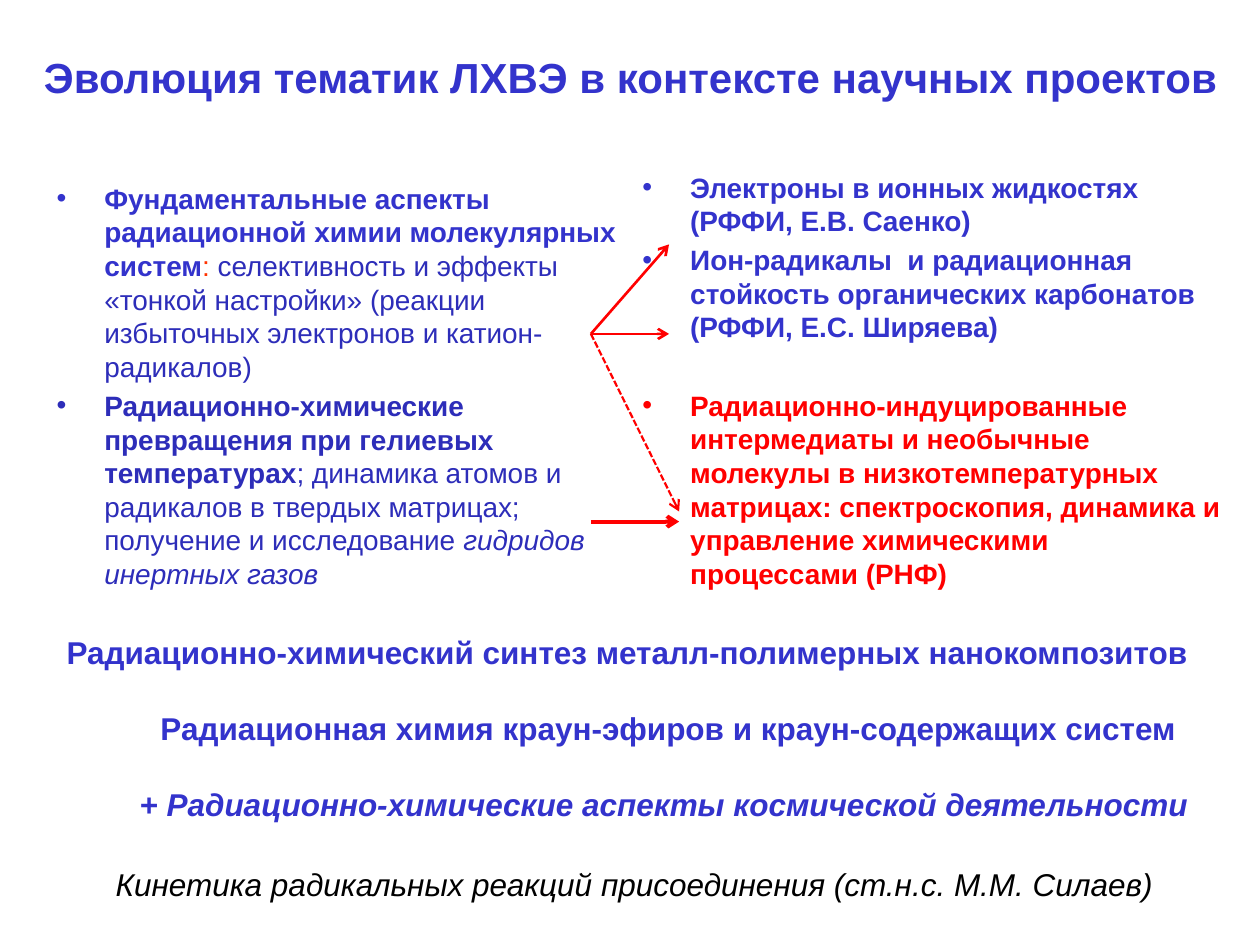
from pptx import Presentation
from pptx import util as u
from pptx.dml.color import RGBColor
from pptx.enum import dml, shapes, text
from pptx.oxml.ns import qn
from lxml import etree

COLORS = {"blue": "3333CC", "dark": "2D2DB9", "orange": "FF3300",
          "red": "FF0000", "black": "000000"}
INDENT = u.Inches(0.38)
CENTER = text.PP_ALIGN.CENTER


def add_text(s, box, size, paragraphs, anchor=text.MSO_ANCHOR.TOP, top=0.05):
    """Each paragraph is (options, runs); each run is (text, colour, style letters)."""
    tf = s.shapes.add_textbox(*map(u.Inches, box)).text_frame
    tf.word_wrap = True
    tf.vertical_anchor = anchor
    tf.margin_top = u.Inches(top)
    for i, (opts, runs) in enumerate(paragraphs):
        p = tf.paragraphs[0] if i == 0 else tf.add_paragraph()
        p.alignment = opts.get("align")
        p.line_spacing = opts.get("line")
        p.space_before = u.Pt(opts.get("before", 0))
        pPr = p._p.get_or_add_pPr()
        pPr.set("marL", str(opts.get("left", 0)))
        pPr.set("indent", str(opts.get("first", 0)))
        if opts.get("bullet"):
            etree.SubElement(pPr, qn("a:buFont")).set("typeface", "Arial")
            etree.SubElement(pPr, qn("a:buChar")).set("char", "•")
        for words, color, style in runs:
            r = p.add_run()
            r.text = words
            r.font.name = "Arial"
            r.font.size = u.Pt(size)
            r.font.bold = "b" in style
            r.font.italic = "i" in style
            r.font.color.rgb = RGBColor.from_string(COLORS[color])


def add_arrow(s, start, end, width, dashed):
    c = s.shapes.add_connector(shapes.MSO_CONNECTOR.STRAIGHT,
                               *map(u.Inches, start + end))
    c.line.color.rgb = RGBColor.from_string(COLORS["red"])
    c.line.width = u.Pt(width)
    if dashed:
        c.line.dash_style = dml.MSO_LINE.SQUARE_DOT
    etree.SubElement(c.line._get_or_add_ln(), qn("a:tailEnd")).set("type", "arrow")
    etree.SubElement(c._element.spPr, qn("a:effectLst"))


prs = Presentation()
prs.slide_width, prs.slide_height = u.Inches(10), u.Inches(7.5)
s = prs.slides.add_slide(prs.slide_layouts[6])

bullet = {"left": INDENT, "first": -INDENT, "before": 3.2, "bullet": True}
bullet_after_gap = {**bullet, "before": 25.6}
topic = {"align": CENTER, "left": INDENT, "before": 21.6}

# Research directions
add_text(s, (0.35, 1.39, 4.72, 3.78), 16, [
    (bullet, [
        ("Фундаментальные аспекты радиационной химии молекулярных систем", "blue", "b"),
        (": ", "orange", ""),
        ("селективность и эффекты «тонкой настройки» (реакции избыточных "
         "электронов и катион-радикалов)", "dark", "")]),
    (bullet, [
        ("Радиационно-химические превращения при гелиевых температурах", "dark", "b"),
        ("; динамика атомов и радикалов в твердых матрицах; получение и "
         "исследование ", "dark", ""),
        ("гидридов инертных газов", "dark", "i")]),
])

# Funded projects
add_text(s, (5, 0.99, 4.8, 4.57), 16, [
    (bullet, [("Электроны в ионных жидкостях (РФФИ, Е.В. Саенко)", "blue", "b")]),
    (bullet, [("Ион-радикалы  и радиационная стойкость органических карбонатов "
               "(РФФИ, Е.С. Ширяева)", "blue", "b")]),
    (bullet_after_gap, [
        ("Радиационно-индуцированные интермедиаты и необычные молекулы в "
         "низкотемпературных матрицах: спектроскопия, динамика и управление "
         "химическими процессами (РНФ)", "red", "b")]),
], top=0.36)

# Title
add_text(s, (0.2, 0.21, 9.61, 0.79), 24, [
    ({"align": CENTER},
     [("Эволюция тематик ЛХВЭ в контексте научных проектов", "blue", "b")]),
], anchor=text.MSO_ANCHOR.MIDDLE)

# Links from directions to projects
fork = (4.69, 2.65)
for start, end, width, dashed in [
    (fork, (5.31, 1.94), 1.5, False),
    (fork, (5.31, 2.65), 1.5, False),
    (fork, (5.39, 4.06), 1.25, True),
    ((4.69, 4.14), (5.39, 4.14), 2.25, False),
]:
    add_arrow(s, start, end, width, dashed)

# Other topics
add_text(s, (0.35, 6.85, 9.37, 0.65), 18, [
    ({"align": CENTER, "line": 0.9},
     [("Кинетика радикальных реакций присоединения (ст.н.с. М.М. Силаев)",
       "black", "i")]),
])
add_text(s, (0.43, 5.01, 9.37, 1.95), 18, [
    ({"left": INDENT, "first": -INDENT, "line": 0.9, "before": 3.6},
     [("Радиационно-химический синтез металл-полимерных нанокомпозитов", "blue", "b")]),
    (topic, [("Радиационная химия краун-эфиров и краун-содержащих систем", "blue", "b")]),
    (topic, [("+ Радиационно-химические аспекты космической деятельности ",
              "blue", "bi")]),
])

prs.save("out.pptx")
